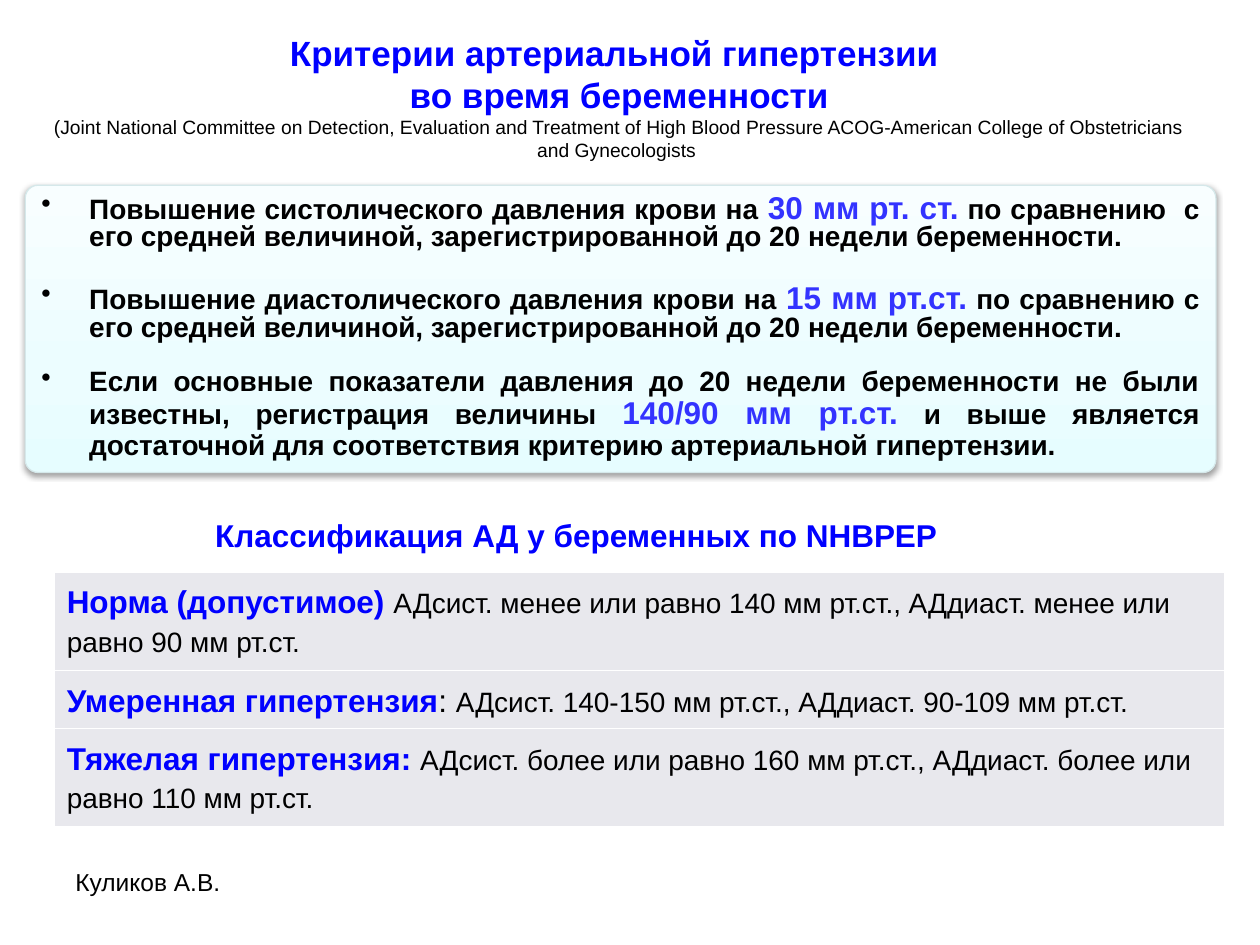
import dataclasses

import lxml.etree
import pptx
import pptx.dml.color
import pptx.enum.shapes
import pptx.enum.text
import pptx.oxml
import pptx.oxml.ns
import pptx.util

ALIGN = pptx.enum.text.PP_ALIGN
ANCHOR = pptx.enum.text.MSO_ANCHOR
FIT = pptx.enum.text.MSO_AUTO_SIZE


@dataclasses.dataclass(frozen=True)
class Theme:
    """Colours, font and type sizes of the slide."""
    font: str = "Arial"
    ink: str = "000000"
    blue: str = "0000FF"
    mark: str = "3333FF"
    cell: str = "E8E8ED"
    rule: str = "FFFFFF"
    edge: str = "D5E8EA"
    glow: tuple = ((0, "E6FDFF"), (35, "ECFDFF"), (100, "F8FEFF"))
    head: int = 20
    key: int = 18
    body: int = 16
    name: int = 14
    note: int = 11


THEME = Theme()
COLS, ROWS = 100, 75

RISES = [
    ("Повышение систолического давления крови на ", "30 мм рт. ст.",
     " по сравнению  с его средней величиной, зарегистрированной до 20 недели беременности. "),
    ("Повышение диастолического давления крови на ", "15 мм рт.ст.",
     " по сравнению с его средней величиной, зарегистрированной до 20 недели беременности. "),
    ("Если основные показатели давления до 20 недели беременности не были известны, "
     "регистрация величины ", "140/90 мм рт.ст.",
     " и выше является достаточной для соответствия критерию артериальной гипертензии. "),
]
SPACES = [(0.8, 5, 5), (0.8, 14, 0), (0.9, 14, 0)]

GRADES = [
    ("Норма (допустимое) ", "",
     "АДсист. менее или равно 140 мм рт.ст., АДдиаст. менее или равно 90 мм рт.ст."),
    ("Умеренная гипертензия", ": ", "АДсист. 140-150 мм рт.ст., АДдиаст. 90-109 мм рт.ст."),
    ("Тяжелая гипертензия: ", "",
     "АДсист. более или равно 160 мм рт.ст., АДдиаст. более или равно 110 мм рт.ст."),
]


def rgb(code):
    """Turn a hex code into a colour."""
    return pptx.dml.color.RGBColor.from_string(code)


def area(deck, col, row, wide, high):
    """Turn grid columns and rows into a place and size."""
    across, down = deck.slide_width / COLS, deck.slide_height / ROWS
    return [pptx.util.Emu(round(n)) for n in
            (col * across, row * down, wide * across, high * down)]


def write(para, text, size=THEME.body, color=THEME.ink, bold=False):
    """Add one formatted run to a paragraph."""
    run = para.add_run()
    run.text = text
    run.font.name = THEME.font
    run.font.size = pptx.util.Pt(size)
    run.font.color.rgb = rgb(color)
    run.font.bold = bold
    run.font.italic = False


def space(para, align=ALIGN.LEFT, line=1.0, before=0, after=0):
    """Set the alignment and spacing of a paragraph."""
    para.alignment = align
    para.line_spacing = line
    para.space_before = pptx.util.Pt(before)
    para.space_after = pptx.util.Pt(after)


def paras(frame, count):
    """Give a text frame the wanted number of paragraphs."""
    for _ in range(count - 1):
        frame.add_paragraph()
    return frame.paragraphs


def bullet(para, indent):
    """Hang a paragraph behind a round bullet."""
    props = para._p.get_or_add_pPr()
    props.set("marL", str(indent))
    props.set("indent", str(-indent))
    mark = lxml.etree.SubElement(props, pptx.oxml.ns.qn("a:buChar"))
    mark.set("char", "•")


def parse(xml):
    """Build an element in the drawing namespace."""
    tag, rest = xml.split(" ", 1)
    return pptx.oxml.parse_xml(f"{tag} {pptx.oxml.ns.nsdecls('a')} {rest}")


def glow(shape):
    """Give a shape its gradient fill and soft shadow."""
    stops = "".join(f'<a:gs pos="{at * 1000}"><a:srgbClr val="{code}"/></a:gs>'
                    for at, code in THEME.glow)
    fill = parse(f'<a:gradFill rotWithShape="1"><a:gsLst>{stops}</a:gsLst>'
                 '<a:lin ang="16200000" scaled="1"/></a:gradFill>')
    shade = parse('<a:outerShdw blurRad="40000" dist="20000" dir="5400000" rotWithShape="0">'
                  f'<a:srgbClr val="{THEME.ink}"><a:alpha val="38000"/></a:srgbClr>'
                  '</a:outerShdw>')
    shape.shadow.inherit = False
    props = shape._element.spPr
    props.find(pptx.oxml.ns.qn("a:prstGeom")).addnext(fill)
    props.find(pptx.oxml.ns.qn("a:effectLst")).append(shade)


def border(cell):
    """Draw a thin rule on each side of a cell."""
    props = cell._tc.get_or_add_tcPr()
    for spot, side in enumerate("LRTB"):
        props.insert(spot, parse(
            f'<a:ln{side} w="12700"><a:solidFill><a:srgbClr val="{THEME.rule}"/>'
            f'</a:solidFill></a:ln{side}>'))


def title(deck, slide):
    """Fill the title with two headlines and the source note."""
    shape = slide.shapes.title
    shape.left, shape.top, shape.width, shape.height = area(deck, 2.7, 5.2, 92.9, 7.9)
    frame = shape.text_frame
    frame.auto_size = FIT.NONE
    frame.word_wrap = True
    frame.vertical_anchor = ANCHOR.BOTTOM
    frame.margin_bottom = pptx.util.Inches(0.03)
    head = dict(size=THEME.head, color=THEME.blue, bold=True)
    lines = [
        ("Критерии артериальной гипертензии ", head),
        ("во время беременности", head),
        ("(Joint National Committee on Detection, Evaluation and Treatment of High Blood "
         "Pressure ACOG-American College of Obstetricians and Gynecologists ",
         dict(size=THEME.note)),
    ]
    for para, (text, look) in zip(paras(frame, len(lines)), lines):
        space(para, ALIGN.CENTER)
        write(para, text, **look)


def panel(deck, slide):
    """Draw the rounded panel with the bulleted criteria."""
    shape = slide.shapes.add_shape(
        pptx.enum.shapes.MSO_SHAPE.ROUNDED_RECTANGLE, *area(deck, 2, 14.7, 94.5, 22.8))
    shape.adjustments[0] = 0.045
    glow(shape)
    shape.line.color.rgb = rgb(THEME.edge)
    shape.line.width = pptx.util.Pt(0.75)
    frame = shape.text_frame
    frame.word_wrap = True
    frame.auto_size = FIT.SHAPE_TO_FIT_TEXT
    frame.vertical_anchor = ANCHOR.TOP
    for para, (lead, value, rest), gaps in zip(paras(frame, len(RISES)), RISES, SPACES):
        space(para, ALIGN.JUSTIFY, *gaps)
        bullet(para, pptx.util.Inches(0.38))
        write(para, lead, bold=True)
        write(para, value, size=THEME.key, color=THEME.mark, bold=True)
        write(para, rest, bold=True)


def label(deck, slide, place, text, anchor=ANCHOR.TOP, **look):
    """Add a text box with one line of text."""
    frame = slide.shapes.add_textbox(*area(deck, *place)).text_frame
    frame.word_wrap = True
    frame.vertical_anchor = anchor
    write(frame.paragraphs[0], text, **look)


def grades(deck, slide):
    """Add the table of pressure grades."""
    highs = (7.8, 4.6, 7.8)
    table = slide.shapes.add_table(
        len(GRADES), 1, *area(deck, 4.3, 45.4, 92.9, sum(highs))).table
    table.first_row = table.horz_banding = False
    for row, high, (name, mark, text) in zip(table.rows, highs, GRADES):
        row.height = area(deck, 0, 0, 0, high)[3]
        cell = row.cells[0]
        cell.fill.solid()
        cell.fill.fore_color.rgb = rgb(THEME.cell)
        border(cell)
        para = cell.text_frame.paragraphs[0]
        space(para, line=1.2, before=THEME.key * 0.2)
        write(para, name, size=THEME.key, color=THEME.blue, bold=True)
        if mark:
            write(para, mark, size=THEME.key)
        write(para, text)


def main():
    """Build the slide and save it."""
    deck = pptx.Presentation()
    deck.slide_width = pptx.util.Inches(10)
    deck.slide_height = pptx.util.Inches(7.5)
    slide = deck.slides.add_slide(deck.slide_layouts[5])
    label(deck, slide, (5, 68.3, 23.3, 5.2), "Куликов А.В.", size=THEME.name)
    title(deck, slide)
    panel(deck, slide)
    grades(deck, slide)
    label(deck, slide, (16.1, 39.9, 65.9, 5.1), "Классификация АД у беременных по NHBPEP",
          anchor=ANCHOR.MIDDLE, size=THEME.key, color=THEME.blue, bold=True)
    deck.save("out.pptx")


if __name__ == "__main__":
    main()
